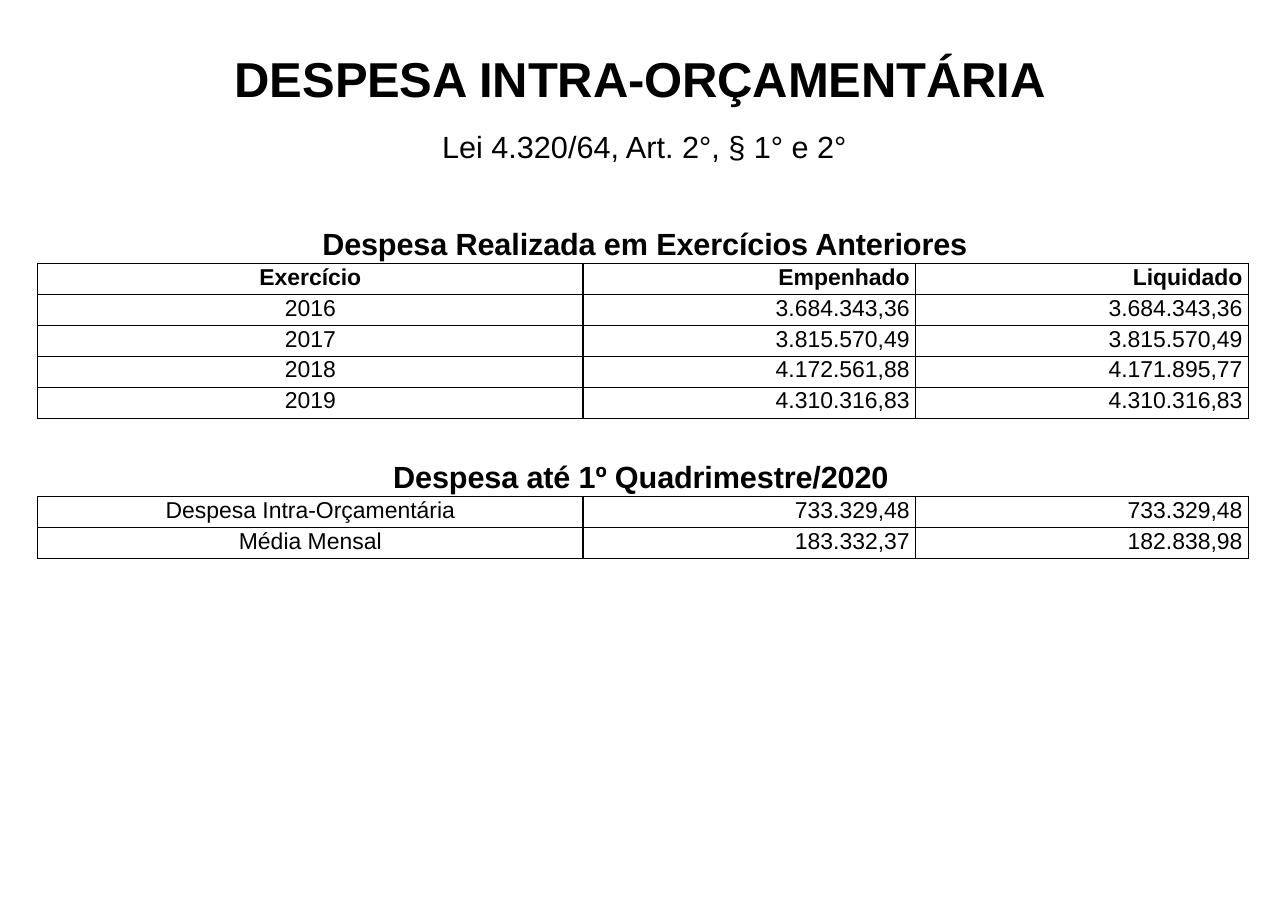
from dataclasses import dataclass

from lxml.etree import SubElement
from pptx import Presentation
from pptx.dml.color import RGBColor
from pptx.enum.text import MSO_ANCHOR, MSO_AUTO_SIZE, PP_ALIGN
from pptx.oxml.ns import qn
from pptx.util import Pt

TITLE = "DESPESA INTRA-ORÇAMENTÁRIA"
LAW = "Lei 4.320/64, Art. 2°, § 1° e 2°"
PAST_HEADING = "Despesa Realizada em Exercícios Anteriores"
CURRENT_HEADING = "Despesa até 1º Quadrimestre/2020"
PAST_YEARS = [
    ("Exercício", "Empenhado", "Liquidado"),
    ("2016", "3.684.343,36", "3.684.343,36"),
    ("2017", "3.815.570,49", "3.815.570,49"),
    ("2018", "4.172.561,88", "4.171.895,77"),
    ("2019", "4.310.316,83", "4.310.316,83"),
]
CURRENT_YEAR = [
    ("Despesa Intra-Orçamentária", "733.329,48", "733.329,48"),
    ("Média Mensal", "183.332,37", "182.838,98"),
]


@dataclass(frozen=True)
class Theme:
    font: str = "Arial"
    ink: str = "000000"
    title: int = 32
    heading: int = 20
    cell: int = 15
    border: int = 1
    tracking: float = -0.1


THEME = Theme()
TABLE_LEFT = 24.6
COLUMN_WIDTHS = (356.4, 217.5, 217.5)
ROW_HEIGHT = 20.25
NUMBER_INSET = 4


def style(para, text, size, bold=False, align=PP_ALIGN.CENTER, before=1.0, tracking=0.0):
    span = para.add_run()
    span.text = text
    span._r.get_or_add_rPr().set("spc", str(round(tracking * 100)))
    para.alignment = align
    para.space_before = Pt(before)
    font = para.font
    font.name, font.size, font.bold = THEME.font, Pt(size), bold
    font.color.rgb = RGBColor.from_string(THEME.ink)


def place(box, left, top, width, height):
    """Position a text shape and give it a tight, top-anchored frame."""
    box.left, box.top, box.width, box.height = map(Pt, (left, top, width, height))
    frame = box.text_frame
    frame.margin_left = frame.margin_right = frame.margin_bottom = 0
    frame.margin_top = Pt(0.7)
    frame.vertical_anchor = MSO_ANCHOR.TOP
    frame.word_wrap = True
    frame.auto_size = MSO_AUTO_SIZE.SHAPE_TO_FIT_TEXT
    return frame


def add_borders(cell):
    """Insert the four edge lines, which must precede the cell's fill."""
    properties = cell._tc.get_or_add_tcPr()
    for index, side in enumerate(("lnL", "lnR", "lnT", "lnB")):
        line = SubElement(properties, qn(f"a:{side}"), w=str(Pt(THEME.border)))
        fill = SubElement(line, qn("a:solidFill"))
        SubElement(fill, qn("a:srgbClr"), val=THEME.ink)
        properties.insert(index, line)


def add_expense_table(page, rows, top, header=False):
    table = page.shapes.add_table(
        len(rows), len(COLUMN_WIDTHS), Pt(TABLE_LEFT), Pt(top),
        Pt(sum(COLUMN_WIDTHS)), Pt(ROW_HEIGHT * len(rows)),
    ).table
    table.first_row = header
    table.horz_banding = False
    for column, width in zip(table.columns, COLUMN_WIDTHS):
        column.width = Pt(width)
    for row_index, values in enumerate(rows):
        table.rows[row_index].height = Pt(ROW_HEIGHT)
        for column_index, text in enumerate(values):
            numeric = column_index > 0
            cell = table.cell(row_index, column_index)
            cell.margin_left = cell.margin_bottom = 0
            cell.margin_right = Pt(NUMBER_INSET if numeric else 0)
            cell.margin_top = Pt(0.7)
            cell.fill.background()
            add_borders(cell)
            style(cell.text_frame.paragraphs[0], text, THEME.cell,
                  bold=header and row_index == 0,
                  align=PP_ALIGN.RIGHT if numeric else PP_ALIGN.CENTER, before=0.65)


def main():
    deck = Presentation()
    deck.slide_width, deck.slide_height = Pt(841.7), Pt(595.4)
    page = deck.slides.add_slide(deck.slide_layouts[5])

    title = place(page.shapes.title, 153.4, 31, 535.7, 40.3)
    style(title.paragraphs[0], TITLE, THEME.title, bold=True,
          align=PP_ALIGN.LEFT, tracking=THEME.tracking)

    intro = place(page.shapes.add_textbox(0, 0, 0, 0), 207.4, 82.8, 427.7, 89.3)
    style(intro.paragraphs[0], LAW, THEME.heading)
    style(intro.add_paragraph(), PAST_HEADING, THEME.heading, bold=True,
          before=39.5, tracking=THEME.tracking)
    add_expense_table(page, PAST_YEARS, 172.1, header=True)

    current = place(page.shapes.add_textbox(0, 0, 0, 0), 257, 298.8, 328.3, 25.9)
    style(current.paragraphs[0], CURRENT_HEADING, THEME.heading, bold=True,
          align=PP_ALIGN.LEFT, tracking=THEME.tracking)
    add_expense_table(page, CURRENT_YEAR, 324.7)

    deck.save("out.pptx")


if __name__ == "__main__":
    main()
